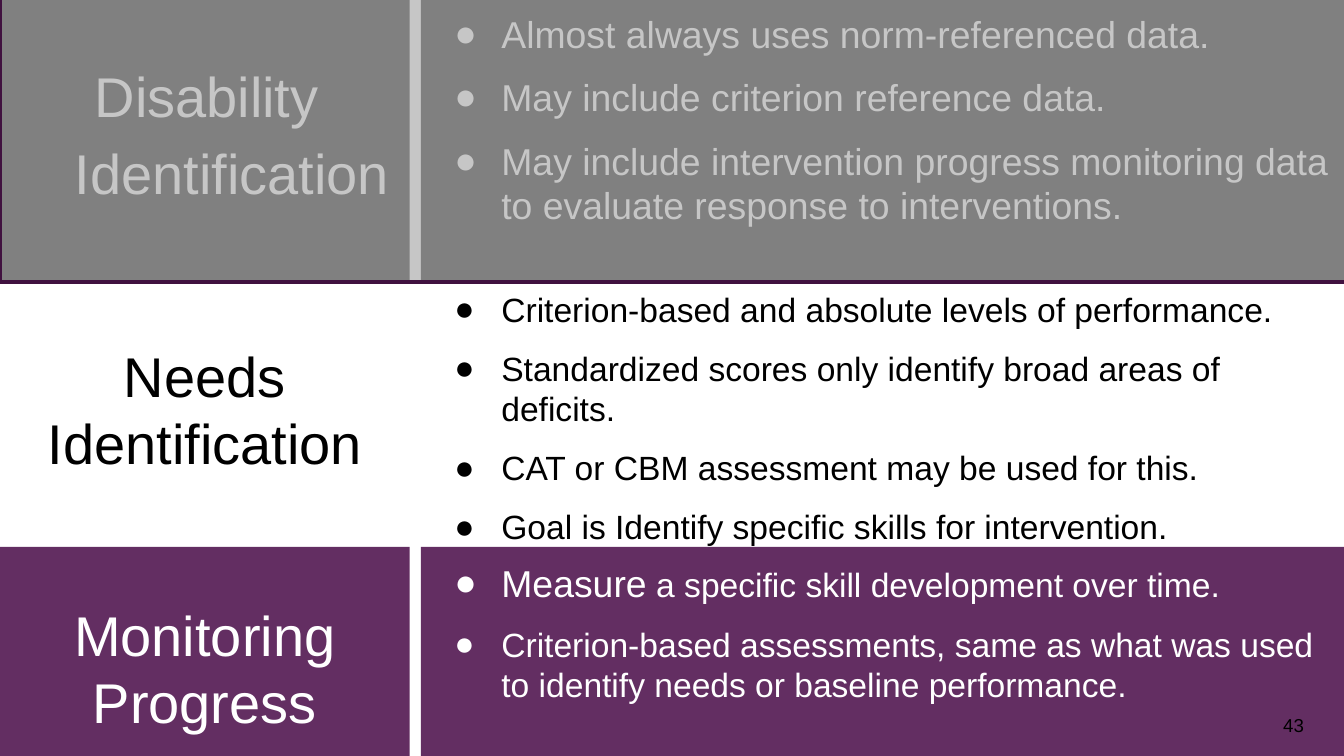
from lxml import etree
from pptx import Presentation
from pptx.dml.color import RGBColor
from pptx.enum.shapes import MSO_SHAPE
from pptx.enum.text import MSO_ANCHOR, PP_ALIGN
from pptx.oxml.ns import qn
from pptx.util import Pt

RECT = MSO_SHAPE.RECTANGLE
TOP = MSO_ANCHOR.TOP
LEFT, CENTER, RIGHT = PP_ALIGN.LEFT, PP_ALIGN.CENTER, PP_ALIGN.RIGHT

WHITE = RGBColor(0xFF, 0xFF, 0xFF)
BLACK = RGBColor(0x00, 0x00, 0x00)
DARK = RGBColor(0x3F, 0x3F, 0x3F)
PURPLE = RGBColor(0x63, 0x2E, 0x62)
VEIL = RGBColor(0xA6, 0xA6, 0xA6)
VEIL_EDGE = RGBColor(0x40, 0x11, 0x3F)

FONT = "Arial"
HEAD_X, HEAD_W = 0, 219.5
BODY_X, BODY_W = 225.5, 494.5
INDENT, HANG = 36, 25.2


def add_panel(s, box, fill):
    """Rectangle when a fill is given, plain text box otherwise."""
    box = [Pt(v) for v in box]
    if fill is None:
        return s.shapes.add_textbox(*box)
    sp = s.shapes.add_shape(RECT, *box)
    sp.shadow.inherit = False
    sp.fill.solid()
    sp.fill.fore_color.rgb = fill
    sp.line.fill.background()
    return sp


def prepare_frame(sp, top_inset=7.2, left_inset=7.2):
    tf = sp.text_frame
    frame_format = {
        "word_wrap": True, "vertical_anchor": TOP,
        "margin_left": Pt(left_inset), "margin_top": Pt(top_inset),
        "margin_right": Pt(7.2), "margin_bottom": Pt(7.2),
    }
    for name, value in frame_format.items():
        setattr(tf, name, value)
    return tf


def next_paragraph(tf, i):
    return tf.paragraphs[0] if i == 0 else tf.add_paragraph()


def add_run(p, text, size, color):
    r = p.add_run()
    r.text = text
    for name, value in {"name": FONT, "size": Pt(size)}.items():
        setattr(r.font, name, value)
    r.font.color.rgb = color


def set_indent(p, left, hang):
    pPr = p._p.get_or_add_pPr()
    pPr.set("marL", str(Pt(left)))
    pPr.set("indent", str(-Pt(hang)))
    return pPr


def set_bullet(p, color):
    pPr = set_indent(p, INDENT, HANG)
    clr = etree.SubElement(pPr, qn("a:buClr"))
    etree.SubElement(clr, qn("a:srgbClr"), val=str(color))
    etree.SubElement(pPr, qn("a:buFont"), typeface=FONT)
    etree.SubElement(pPr, qn("a:buChar"), char="●")


def add_heading(s, box, lines, fill, color, top_inset, left_inset=7.2,
                hang=None, spacing=None):
    tf = prepare_frame(add_panel(s, box, fill), top_inset, left_inset)
    for i, line in enumerate(lines):
        p = next_paragraph(tf, i)
        if hang:
            set_indent(p, INDENT, hang)
        p.alignment = CENTER
        if spacing:
            p.line_spacing = spacing
        add_run(p, line, 30, color)


def add_bullets(s, box, items, fill, color):
    """Each item is a list of (text, size) runs."""
    tf = prepare_frame(add_panel(s, box, fill))
    for i, runs in enumerate(items):
        p = next_paragraph(tf, i)
        p.alignment = LEFT
        if i:
            p.space_before = Pt(10)
        set_bullet(p, color)
        for text, size in runs:
            add_run(p, text, size, color)


def add_veil(s, box):
    sp = add_panel(s, box, VEIL)
    clr = sp._element.spPr.find(qn("a:solidFill")).find(qn("a:srgbClr"))
    etree.SubElement(clr, qn("a:alpha"), val="63000")
    sp.line.color.rgb = VEIL_EDGE
    sp.line.width = Pt(2)


def add_page_number(s, box, number):
    p = prepare_frame(add_panel(s, box, None)).paragraphs[0]
    p.alignment = RIGHT
    add_run(p, number, 10, BLACK)


def main():
    prs = Presentation()
    prs.slide_width, prs.slide_height = Pt(720), Pt(405)
    s = prs.slides.add_slide(prs.slide_layouts[6])

    add_heading(s, (HEAD_X, -1.4, HEAD_W, 152), ["Disability Identification"],
                DARK, WHITE, 28.8, left_inset=0, hang=27, spacing=1.15)
    add_heading(s, (HEAD_X, 161.3, HEAD_W, 131), ["Needs", "Identification"],
                None, BLACK, 21.6)
    add_bullets(s, (BODY_X, -1.4, BODY_W, 152), [
        [("Almost always uses norm-referenced data.", 20)],
        [("May include criterion reference data.", 20)],
        [("May include intervention progress monitoring data to evaluate "
          "response to interventions.", 20)],
    ], DARK, WHITE)
    add_bullets(s, (BODY_X, 147.6, BODY_W, 131), [
        [("Criterion-based and absolute levels of performance.", 18)],
        [("Standardized scores only identify broad areas of deficits.", 18)],
        [("CAT or CBM assessment may be used for this.", 18)],
        [("Goal is Identify specific skills for intervention.", 18)],
    ], None, BLACK)
    add_bullets(s, (BODY_X, 293, BODY_W, 114.5), [
        [("Measure", 20), (" a specific skill development over time.", 18)],
        [("Criterion-based assessments, same as what was used to identify "
          "needs or baseline performance.", 18)],
    ], PURPLE, WHITE)
    add_heading(s, (HEAD_X, 293, HEAD_W, 114.5), ["Monitoring", "Progress"],
                PURPLE, WHITE, 28.8)
    add_veil(s, (0, -154, 773.3, 305.3))
    add_page_number(s, (671.8, 376.6, 33.8, 28.8), "43")

    prs.save("out.pptx")


if __name__ == "__main__":
    main()
